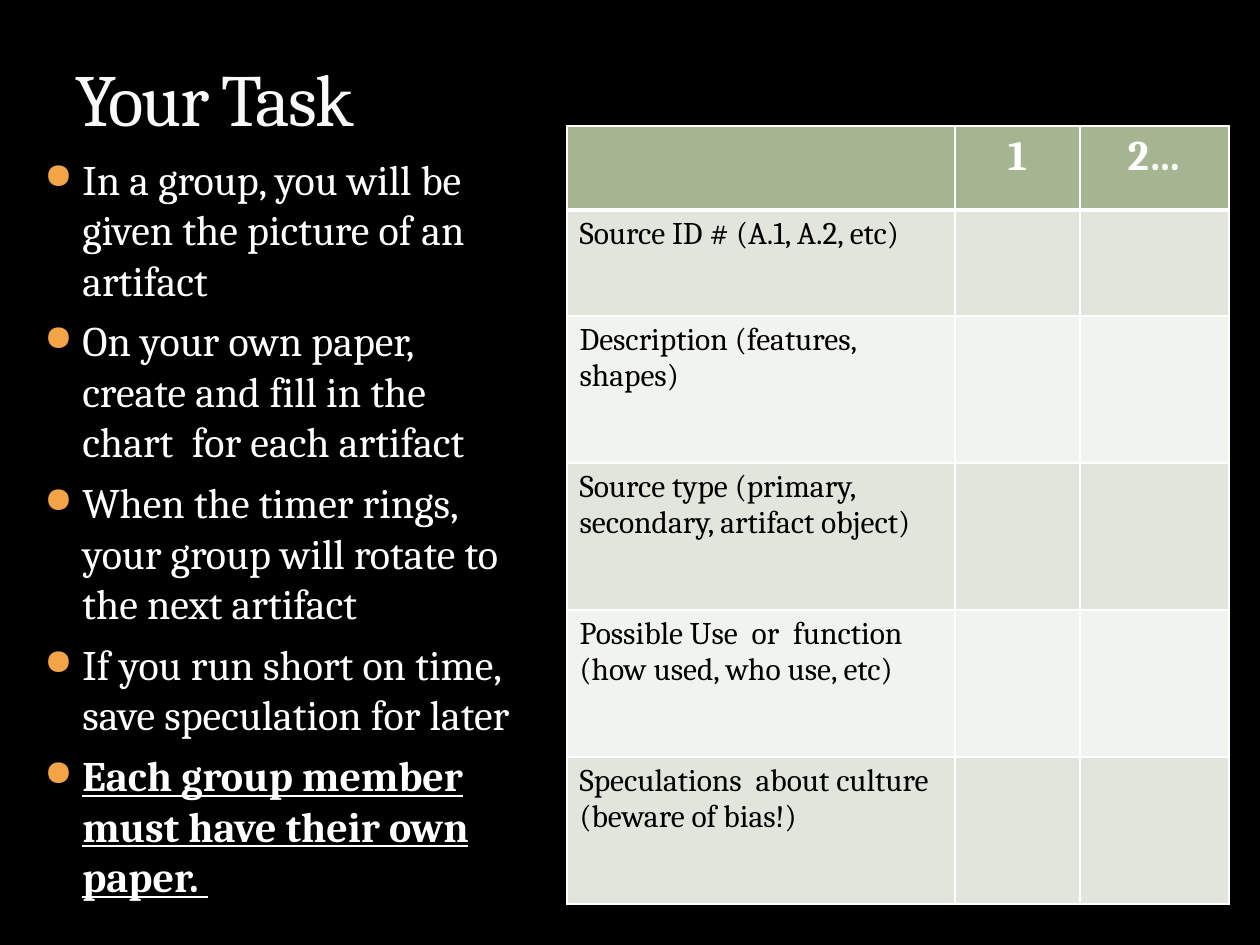
from dataclasses import dataclass

from lxml import etree
from pptx import Presentation
from pptx import util as u
from pptx.dml.color import RGBColor
from pptx.enum import text
from pptx.oxml import ns

SCALE = 914400 / 126
FONT = "Cambria"
COLORS = {
    "background": "000000",
    "title": "F9F9F9",
    "white": "FFFFFF",
    "black": "000000",
    "bullet": "F3A447",
    "header": "A5B592",
    "band_dark": "E1E5DC",
    "band_light": "F0F3EE",
}


@dataclass
class Box:
    x: int
    y: int
    w: int
    h: int


@dataclass
class Bullet:
    words: str
    strong: bool = False


@dataclass
class Row:
    height: int
    fill: str
    cells: tuple


BULLETS = [
    Bullet("In a group, you will be given the picture of an artifact"),
    Bullet("On your own paper, create and fill in the chart  for each artifact"),
    Bullet("When the timer rings, your group will rotate to the next artifact"),
    Bullet("If you run short on time, save speculation for later"),
    Bullet("Each group member must have their own paper. ", True),
]
COLUMNS = [388, 125, 149]
ROWS = [
    Row(84, "header", ("", "1", "2…")),
    Row(106, "band_dark", ("Source ID # (A.1, A.2, etc)", "", "")),
    Row(147, "band_light", ("Description (features, shapes)", "", "")),
    Row(147, "band_dark", ("Source type (primary,  secondary, artifact object)", "", "")),
    Row(147, "band_light", ("Possible Use  or  function (how used, who use, etc)", "", "")),
    Row(147, "band_dark", ("Speculations  about culture (beware of bias!)", "", "")),
]


def px(n: int) -> int:
    return round(n * SCALE)


def place(box: Box) -> list:
    return [px(n) for n in (box.x, box.y, box.w, box.h)]


def rgb(name: str) -> RGBColor:
    return RGBColor.from_string(COLORS[name])


def add_run(p, words: str, color: str, **fmt):
    r = p.add_run()
    r.text = words
    r.font.color.rgb = rgb(color)
    for key, value in {"name": FONT, **fmt}.items():
        setattr(r.font, key, value)
    return r


def add_text_frame(slide, box: Box, anchor):
    tf = slide.shapes.add_textbox(*place(box)).text_frame
    tf.word_wrap = True
    tf.vertical_anchor = anchor
    return tf


def add_title(slide, box: Box, words: str) -> None:
    tf = add_text_frame(slide, box, text.MSO_ANCHOR.BOTTOM)
    r = add_run(tf.paragraphs[0], words, "title", size=u.Pt(42))
    r.font._element.set("spc", "-100")


def set_bullet(p) -> None:
    pPr = p._p.get_or_add_pPr()
    pPr.set("marL", str(px(38)))
    pPr.set("indent", str(-px(38)))
    color = etree.SubElement(pPr, ns.qn("a:buClr"))
    etree.SubElement(color, ns.qn("a:srgbClr"), val=COLORS["bullet"])
    etree.SubElement(pPr, ns.qn("a:buSzPct"), val="85000")
    etree.SubElement(pPr, ns.qn("a:buChar"), char="●")


def add_bullets(slide, box: Box, bullets: list) -> None:
    tf = add_text_frame(slide, box, text.MSO_ANCHOR.TOP)
    for i, item in enumerate(bullets):
        p = tf.add_paragraph() if i else tf.paragraphs[0]
        p.space_before = u.Pt(6)
        set_bullet(p)
        add_run(p, item.words, "white", size=u.Pt(24),
                bold=item.strong, underline=item.strong)


def set_borders(cell, widths: dict) -> None:
    tcPr = cell._tc.get_or_add_tcPr()
    for i, (side, width) in enumerate(widths.items()):
        ln = etree.Element(ns.qn(f"a:ln{side}"), w=str(u.Pt(width)))
        fill = etree.SubElement(ln, ns.qn("a:solidFill"))
        etree.SubElement(fill, ns.qn("a:srgbClr"), val=COLORS["white"])
        tcPr.insert(i, ln)


def add_task_table(slide, box: Box, columns: list, rows: list) -> None:
    table = slide.shapes.add_table(len(rows), len(columns), *place(box)).table
    for column, width in zip(table.columns, columns):
        column.width = px(width)
    for i, row in enumerate(rows):
        table.rows[i].height = px(row.height)
        header = i == 0
        for j, words in enumerate(row.cells):
            cell = table.cell(i, j)
            cell.fill.solid()
            cell.fill.fore_color.rgb = rgb(row.fill)
            set_borders(cell, {"L": 1, "R": 1, "T": 3 if i == 1 else 1,
                               "B": 3 if header else 1})
            if words:
                p = cell.text_frame.paragraphs[0]
                p.alignment = text.PP_ALIGN.CENTER if header else text.PP_ALIGN.LEFT
                add_run(p, words, "white" if header else "black",
                        size=u.Pt(24 if header else 18), bold=header)


def main() -> None:
    prs = Presentation()
    prs.slide_width, prs.slide_height = px(1260), px(945)
    slide = prs.slides.add_slide(prs.slide_layouts[6])
    slide.background.fill.solid()
    slide.background.fill.fore_color.rgb = rgb("background")
    add_bullets(slide, Box(32, 147, 504, 798), BULLETS)
    add_title(slide, Box(63, 32, 1134, 115), "Your Task")
    table_box = Box(567, 126, sum(COLUMNS), sum(row.height for row in ROWS))
    add_task_table(slide, table_box, COLUMNS, ROWS)
    prs.save("out.pptx")


if __name__ == "__main__":
    main()
